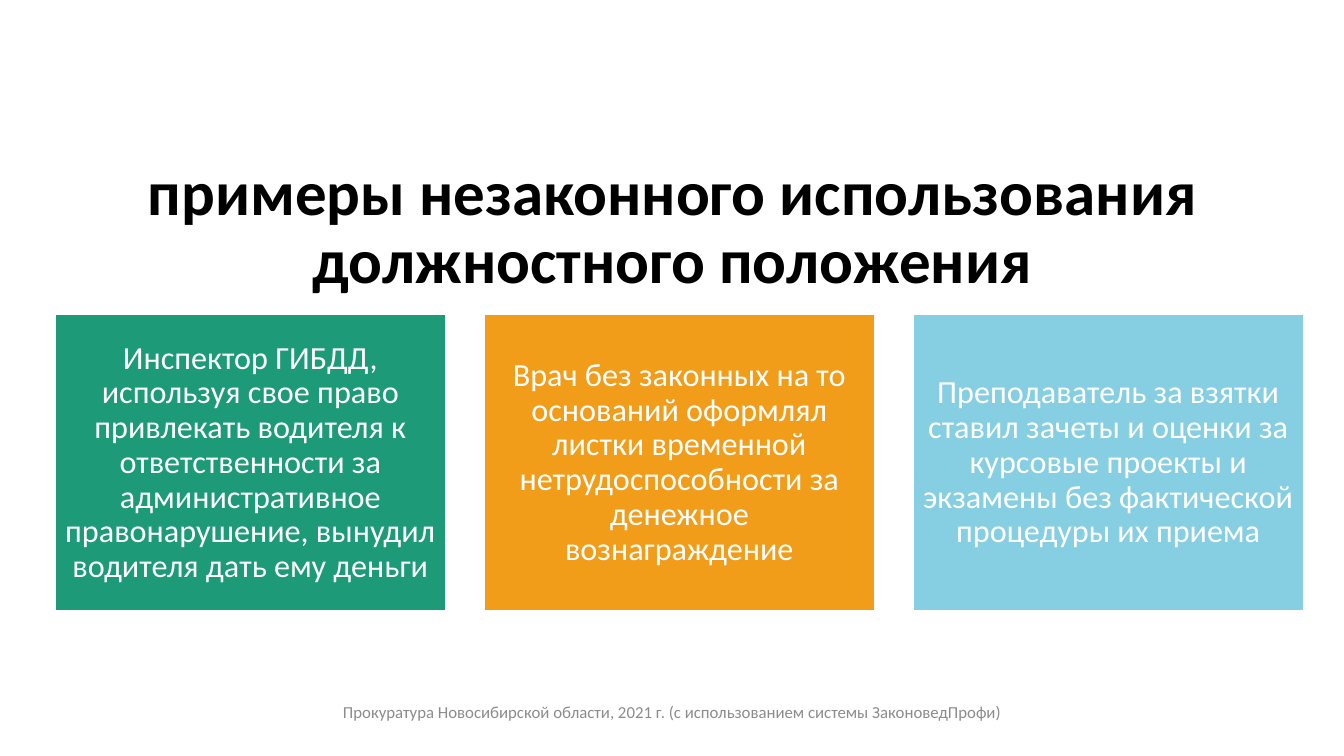
from pptx import Presentation
from pptx.dml.color import RGBColor
from pptx.enum.shapes import MSO_SHAPE
from pptx.enum.text import MSO_ANCHOR, PP_ALIGN
from pptx.util import Cm, Pt

FONT = "Calibri"
WHITE = "FFFFFF"
CARD_LEFT, CARD_TOP = 1.4, 7.93
CARD_WIDTH, CARD_HEIGHT = 9.83, 7.47
CARD_STEP = 10.81
EXAMPLES = [
    ("1D9A78", "Инспектор ГИБДД, используя свое право привлекать водителя к "
               "ответственности за административное правонарушение, "
               "вынудил водителя дать ему деньги"),
    ("F19D19", "Врач без законных на то оснований оформлял листки временной "
               "нетрудоспособности за денежное вознаграждение"),
    ("86CFE2", "Преподаватель за взятки ставил зачеты и оценки за курсовые "
               "проекты и экзамены без фактической процедуры их приема"),
]


def color(hex_value):
    """Turn a hex string into a colour."""
    return RGBColor.from_string(hex_value)


def write(frame, wording, size, hex_value, anchor, spacing=1.0, bold=False):
    """Fill a text frame with one centred paragraph."""
    frame.word_wrap = True
    frame.vertical_anchor = anchor
    frame.text = wording
    paragraph = frame.paragraphs[0]
    paragraph.alignment = PP_ALIGN.CENTER
    paragraph.line_spacing = spacing
    font = paragraph.runs[0].font
    font.name, font.size, font.bold = FONT, Pt(size), bold
    font.color.rgb = color(hex_value)


def add_label(slide, left, top, width, height, *wording, **style):
    """Add a text box with one centred paragraph."""
    label = slide.shapes.add_textbox(Cm(left), Cm(top), Cm(width), Cm(height))
    write(label.text_frame, *wording, **style)


def add_card(slide, left, fill, wording):
    """Add a coloured card holding one example."""
    card = slide.shapes.add_shape(MSO_SHAPE.RECTANGLE, Cm(left), Cm(CARD_TOP),
                                  Cm(CARD_WIDTH), Cm(CARD_HEIGHT))
    card.shadow.inherit = False
    card.fill.solid()
    card.fill.fore_color.rgb = color(fill)
    card.line.color.rgb = color(WHITE)
    card.line.width = Pt(1)
    frame = card.text_frame
    frame.margin_left = frame.margin_right = Cm(0.23)
    frame.margin_top = frame.margin_bottom = Cm(0.23)
    write(frame, wording, 23, WHITE, MSO_ANCHOR.MIDDLE, spacing=0.9)


def main():
    """Build the slide and save it."""
    deck = Presentation()
    deck.slide_width, deck.slide_height = Cm(33.87), Cm(19.05)
    slide = deck.slides.add_slide(deck.slide_layouts[6])
    for position, (fill, wording) in enumerate(EXAMPLES):
        add_card(slide, CARD_LEFT + position * CARD_STEP, fill, wording)
    add_label(slide, CARD_LEFT, 3.63, 31.09, 3.99,
              "примеры незаконного использования должностного положения",
              45, "000000", MSO_ANCHOR.BOTTOM, spacing=0.9, bold=True)
    add_label(slide, 7.32, 17.53, 19.25, 0.79,
              "Прокуратура Новосибирской области, 2021 г. "
              "(с использованием системы ЗаконоведПрофи)",
              12, "8C8C8C", MSO_ANCHOR.MIDDLE)
    deck.save("out.pptx")


if __name__ == "__main__":
    main()
